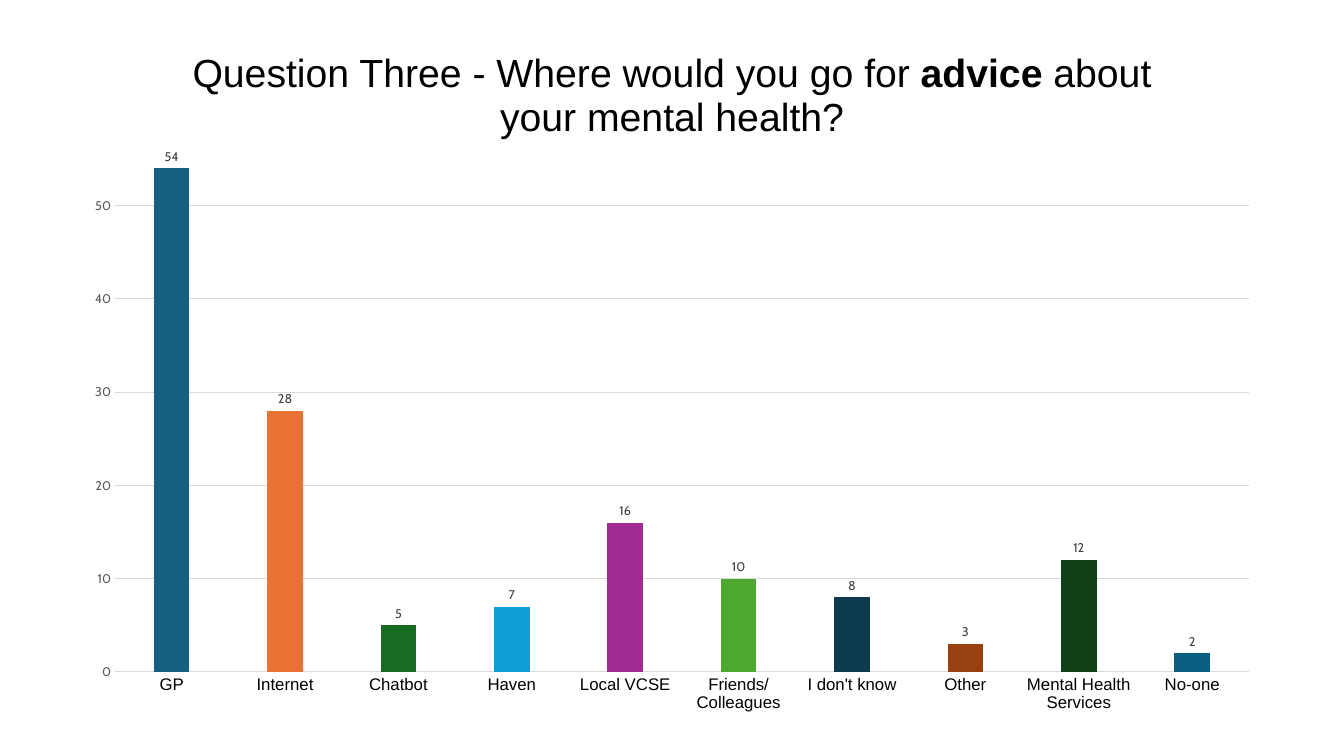
from lxml import etree
from pptx import Presentation
from pptx.chart.data import CategoryChartData
from pptx.dml.color import RGBColor
from pptx.enum.chart import XL_CHART_TYPE, XL_LABEL_POSITION, XL_TICK_MARK
from pptx.enum.text import MSO_ANCHOR, MSO_AUTO_SIZE, PP_ALIGN
from pptx.oxml.ns import qn
from pptx.util import Pt

PX = 914400 / 100.8
BLACK = RGBColor(0x00, 0x00, 0x00)
AXIS_GREY = RGBColor(0x59, 0x59, 0x59)
LABEL_GREY = RGBColor(0x40, 0x40, 0x40)
GRID_GREY = RGBColor(0xD9, 0xD9, 0xD9)

# Answer, count and bar colour
ANSWERS = [
    ("GP", 54, RGBColor(0x15, 0x60, 0x82)),
    ("Internet", 28, RGBColor(0xE9, 0x71, 0x32)),
    ("Chatbot", 5, RGBColor(0x19, 0x6B, 0x24)),
    ("Haven", 7, RGBColor(0x0F, 0x9E, 0xD5)),
    ("Local VCSE", 16, RGBColor(0xA0, 0x2B, 0x93)),
    ("Friends/Colleagues", 10, RGBColor(0x4E, 0xA7, 0x2E)),
    ("I don't know", 8, RGBColor(0x0D, 0x3A, 0x4E)),
    ("Other", 3, RGBColor(0x99, 0x40, 0x10)),
    ("Mental Health Services", 12, RGBColor(0x0F, 0x40, 0x16)),
    ("No-one", 2, RGBColor(0x09, 0x5F, 0x80)),
]

# Chart frame and the plot inside its axes: left, top, width, height in px
FRAME = (71, 30, 1202, 696)
PLOT = (115, 159, 1134, 513)


def set_font(font, size, color, name="Cabin", bold=False):
    font.size = Pt(size)
    font.color.rgb = color
    font.name = name
    font.bold = bold


def add_text(p, text, **fmt):
    r = p.add_run()
    r.text = text
    set_font(r.font, **fmt)


prs = Presentation()
prs.slide_width = round(1344 * PX)
prs.slide_height = round(756 * PX)
s = prs.slides.add_slide(prs.slide_layouts[5])

# Title
title = s.shapes.title
title.left, title.top, title.width, title.height = (
    round(v * PX) for v in (172, 50, 1000, 92))
tf = title.text_frame
tf.word_wrap = True
tf.auto_size = MSO_AUTO_SIZE.NONE
tf.vertical_anchor = MSO_ANCHOR.MIDDLE
tf.margin_left = tf.margin_right = tf.margin_top = tf.margin_bottom = 0
p = tf.paragraphs[0]
p.alignment = PP_ALIGN.CENTER
p.line_spacing = 0.95
for text, bold in (("Question Three - Where would you go for ", False),
                   ("advice", True),
                   (" about your mental health?", False)):
    add_text(p, text, size=28, color=BLACK, name="Arial", bold=bold)

# Chart
data = CategoryChartData()
data.categories = [answer for answer, _, _ in ANSWERS]
data.add_series("Series 1", [count for _, count, _ in ANSWERS])
chart = s.shapes.add_chart(XL_CHART_TYPE.COLUMN_CLUSTERED,
                           *(round(v * PX) for v in FRAME), data).chart
chart.has_title = False
chart.has_legend = False
set_font(chart.font, 10, BLACK)

# Bars and their labels
plot = chart.plots[0]
plot.gap_width = 219
plot.overlap = -27
plot.vary_by_categories = False
series = plot.series[0]
for i, (_, _, color) in enumerate(ANSWERS):
    fill = series.points[i].format.fill
    fill.solid()
    fill.fore_color.rgb = color
labels = series.data_labels
labels.show_value = True
labels.position = XL_LABEL_POSITION.OUTSIDE_END
set_font(labels.font, 9, LABEL_GREY)

# Axes
cat_axis, val_axis = chart.category_axis, chart.value_axis
for axis in (cat_axis, val_axis):
    axis.major_tick_mark = axis.minor_tick_mark = XL_TICK_MARK.NONE
set_font(cat_axis.tick_labels.font, 12, BLACK, "Arial")
set_font(val_axis.tick_labels.font, 9, AXIS_GREY)
val_axis.minimum_scale = 0
val_axis.maximum_scale = 55
val_axis.major_unit = 10
val_axis.has_major_gridlines = True
val_axis.format.line.fill.background()
for line in (cat_axis.format.line, val_axis.major_gridlines.format.line):
    line.color.rgb = GRID_GREY
    line.width = Pt(0.75)

# Fixed place of the plot, as fractions of the chart frame
area = chart.element.find(".//" + qn("c:plotArea"))
layout = area.find(qn("c:layout"))
if layout is None:
    layout = etree.Element(qn("c:layout"))
    area.insert(0, layout)
manual = etree.SubElement(layout, qn("c:manualLayout"))
settings = [("layoutTarget", "inner"), ("xMode", "edge"), ("yMode", "edge"),
            ("x", (PLOT[0] - FRAME[0]) / FRAME[2]),
            ("y", (PLOT[1] - FRAME[1]) / FRAME[3]),
            ("w", PLOT[2] / FRAME[2]),
            ("h", PLOT[3] / FRAME[3])]
for tag, value in settings:
    etree.SubElement(manual, qn("c:" + tag)).set("val", str(value))

prs.save("out.pptx")
